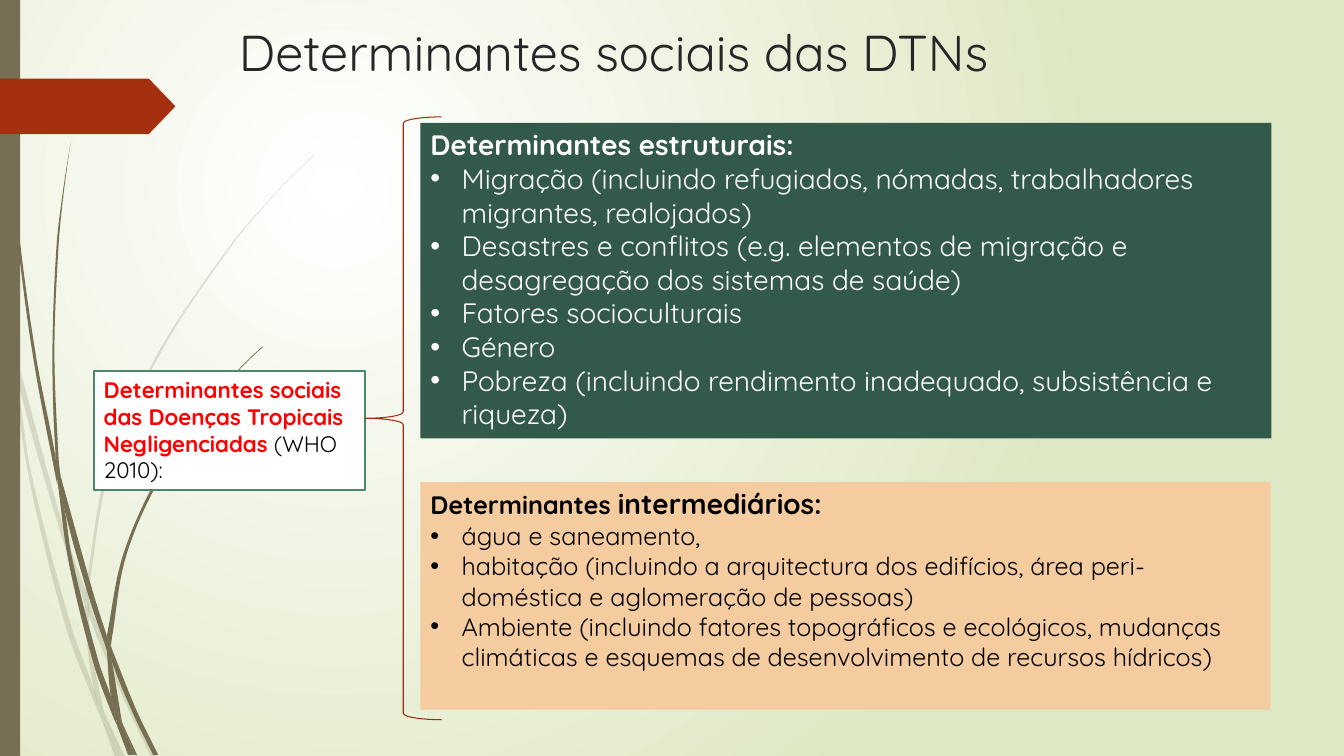
import math

from lxml import etree
from pptx import Presentation
from pptx import util as u
from pptx.dml.color import RGBColor
from pptx.enum import shapes, text
from pptx.oxml import ns

OLIVE = RGBColor(0x76, 0x6F, 0x54)
RUST = RGBColor(0xA5, 0x30, 0x10)
BRACE_RED = RGBColor(0x9E, 0x2E, 0x0F)
GREEN = RGBColor(0x32, 0x59, 0x49)
BORDER_GREEN = RGBColor(0x4B, 0x86, 0x6E)
PEACH = RGBColor(0xF5, 0xCB, 0xA0)
PALE_LIME = RGBColor(0xDF, 0xE8, 0xC4)
CHARCOAL = RGBColor(0x26, 0x26, 0x26)
RED = RGBColor(0xFF, 0, 0)
WHITE = RGBColor(0xFF, 0xFF, 0xFF)
BLACK = RGBColor(0, 0, 0)
FONT = "Quicksand"

PALE_WISPS = [
    ([(0, 2.82), (.09, 3.22), (.11, 3.5)], [(0, 2.99), (.1, 3.44), (.11, 3.5)]),
    ([(.14, 3.45), (.62, 5.2), (.85, 5.86)], [(.14, 3.45), (.17, 3.76), (.58, 5.22), (.84, 5.99)]),
    ([(.88, 5.96), (.92, 6.07), (1.27, 6.92), (1.55, 7.51)],
     [(.88, 5.96), (.88, 6.1), (1.23, 6.94), (1.5, 7.51)]),
    ([(1.05, 7.11), (1.24, 7.51)], [(1.05, 7.11), (1.19, 7.51)]),
    ([(.11, 3.5), (.17, 3.76), (.31, 4.69), (.7, 6.19), (.93, 6.83), (.99, 7.07), (1.01, 7.14)],
     [(.11, 3.5), (.28, 4.7), (.65, 6.21), (.92, 6.93), (1.01, 7.14)]),
    ([(.84, 5.99), (.87, 6.46), (.93, 6.83), (.96, 6.92), (1.05, 7.11)],
     [(.84, 5.99), (.88, 6.08), (.88, 6.1), (.91, 6.46), (1.03, 7.06), (1.05, 7.11)]),
    ([(3.12, 1.53), (2.89, 1.75), (2.68, 1.97), (2.28, 2.44), (1.58, 3.48), (1.07, 4.61),
      (.85, 5.84), (.85, 5.86), (.88, 5.96)],
     [(3.12, 1.54), (2.9, 1.75), (2.68, 1.98), (2.29, 2.45), (1.6, 3.49), (1.1, 4.62),
      (.88, 5.84), (.88, 5.96)]),
    ([(1.01, 7.14), (1.14, 7.51)], [(1.01, 7.14), (1.19, 7.51)]),
    ([(.85, 5.86), (.84, 5.99), (.88, 6.08)], [(.85, 5.86), (.88, 5.96), (.88, 6.1)]),
    ([(.93, 6.83), (.99, 7.07), (1.01, 7.14), (1.19, 7.51)],
     [(.93, 6.83), (.96, 6.92), (1.05, 7.11), (1.19, 7.51)]),
]
DARK_WISPS = [
    ([(.03, 0), (.04, .48), (.07, 1.1), (.17, 2.33), (.33, 3.55), (.56, 4.77), (.57, 4.81)],
     [(.04, 0), (.05, .48), (.08, 1.09), (.19, 2.32), (.36, 3.55), (.55, 4.53), (.57, 4.81)]),
    ([(.6, 4.72), (.64, 5.05), (.88, 5.92), (1.06, 6.45)], [(.6, 4.72), (.93, 5.9), (1.06, 6.31)]),
    ([(1.1, 6.41), (1.11, 6.56), (1.32, 7.08), (1.52, 7.49)],
     [(1.1, 6.41), (1.13, 6.49), (1.36, 7.06), (1.57, 7.49)]),
    ([(.57, 4.77), (.68, 5.57), (.93, 6.59), (1.11, 7.08), (1.17, 7.22)],
     [(.57, 4.77), (.64, 5.05), (.72, 5.56), (.98, 6.57), (1.1, 6.91), (1.16, 7.17), (1.17, 7.22)]),
    ([(.7, 1.41), (.62, 1.93), (.56, 2.45), (.52, 3.49), (.55, 4.49), (.6, 4.72)],
     [(.7, 1.41), (.63, 1.93), (.58, 2.45), (.54, 3.49), (.58, 4.53), (.6, 4.72)]),
    ([(1.22, 7.19), (1.33, 7.49)], [(1.22, 7.19), (1.36, 7.49)]),
    ([(.55, 4.49), (.55, 4.53), (.57, 4.77), (.64, 5.05)], [(.55, 4.49), (.6, 4.72), (.64, 5.05)]),
    ([(2.6, 3.44), (2.45, 3.58), (2.31, 3.73), (2.04, 4.05), (1.56, 4.74), (1.22, 5.51), (1.06, 6.31)],
     [(2.61, 3.44), (2.45, 3.59), (2.31, 3.74), (2.05, 4.06), (1.58, 4.76), (1.25, 5.52),
      (1.11, 6.33), (1.1, 6.41)]),
    ([(1.17, 7.22), (1.27, 7.49)], [(1.17, 7.22), (1.31, 7.49)]),
    ([(1.06, 6.45), (1.1, 6.91), (1.16, 7.06), (1.22, 7.19)],
     [(1.06, 6.45), (1.09, 6.51), (1.11, 6.56), (1.21, 7.16), (1.22, 7.19)]),
    ([(1.06, 6.31), (1.06, 6.45), (1.11, 6.56)], [(1.06, 6.31), (1.1, 6.41), (1.11, 6.56)]),
    ([(1.1, 6.91), (1.16, 7.17), (1.17, 7.22), (1.3, 7.49)],
     [(1.1, 6.91), (1.16, 7.06), (1.22, 7.19), (1.33, 7.49)]),
]
STRUCTURAL = [
    "Migração (incluindo refugiados, nómadas, trabalhadores migrantes, realojados)",
    "Desastres e conflitos (e.g. elementos de migração e desagregação dos sistemas de saúde)",
    "Fatores socioculturais", "Género",
    "Pobreza (incluindo rendimento inadequado, subsistência e riqueza)",
]
INTERMEDIATE = [
    "água e saneamento,",
    "habitação (incluindo a arquitectura dos edifícios, área peri-doméstica e aglomeração de pessoas)",
    "Ambiente (incluindo fatores topográficos e ecológicos, mudanças climáticas e esquemas de "
    "desenvolvimento de recursos hídricos)",
]


def paint_background(slide):
    """Fill the slide with a round glow of white turning to lime."""
    fill = slide.background.fill
    fill.gradient()
    for stop, color in zip(fill.gradient_stops, (WHITE, PALE_LIME)):
        stop.color.rgb = color
    gradient = slide.background._cSld.find(".//" + ns.qn("a:gradFill"))
    gradient.remove(gradient.find(ns.qn("a:lin")))
    glow = etree.SubElement(gradient, ns.qn("a:path"), path="circle")
    etree.SubElement(glow, ns.qn("a:fillToRect"), l="50000", t="50000", r="100000", b="100000")


def paint(shape, fill=None, line=None, width=1):
    """Give a shape its fill and outline and take away its shadow."""
    shape.shadow.inherit = False
    for part, color in ((shape.fill, fill), (shape.line.fill, line)):
        if color is None:
            part.background()
        else:
            part.solid()
            part.fore_color.rgb = color
    if line is not None:
        shape.line.width = u.Pt(width)
    return shape


def add_preset(slide, kind, box, **style):
    """Add a painted preset shape at a box given in inches."""
    return paint(slide.shapes.add_shape(kind, *map(u.Inches, box)), **style)


def curve_handles(knots):
    """Return the two Bezier handles of each segment of a smooth curve."""
    padded = [knots[0], *knots, knots[-1]]
    handles = []
    for a, b, c, d in zip(padded, padded[1:], padded[2:], padded[3:]):
        reach = math.dist(b, c) / 3
        before, after = reach / math.dist(a, c), reach / math.dist(b, d)
        handles.append([[q + (r - p) * before for p, q, r in zip(a, b, c)],
                        [r - (s - q) * after for q, r, s in zip(b, c, d)]])
    return handles


def add_wisp(slide, edges, opacity):
    """Add a blade of grass between two curved edges."""
    near, far = edges[0], edges[1][::-1]
    knots = near + far
    builder = slide.shapes.build_freeform(*(1000 * v for v in knots[0]), scale=u.Inches(1) / 1000)
    builder.add_line_segments([(1000 * x, 1000 * y) for x, y in knots[1:]], close=True)
    wisp = paint(builder.convert_to_shape(), fill=OLIVE)
    corner = [min(axis) for axis in zip(*knots)]
    segments = list(wisp._element.spPr.iter(ns.qn("a:lnTo")))
    for segment, handles in zip(segments, curve_handles(near) + [None] + curve_handles(far)):
        if handles:
            curve = etree.Element(ns.qn("a:cubicBezTo"))
            for handle in handles:
                x, y = (str(round(1000 * (v - low))) for v, low in zip(handle, corner))
                etree.SubElement(curve, ns.qn("a:pt"), x=x, y=y)
            segment.getparent().replace(segment, curve)
            curve.append(segment[0])
    if opacity < 100:
        color = wisp._element.spPr.find(".//" + ns.qn("a:srgbClr"))
        etree.SubElement(color, ns.qn("a:alpha"), val=str(opacity * 1000))


def write_runs(paragraph, *runs):
    """Write (words, size, color, bold) runs into a left-aligned paragraph."""
    paragraph.alignment = text.PP_ALIGN.LEFT
    for words, size, color, bold in runs:
        run = paragraph.add_run()
        run.text = words
        run.font.color.rgb = color
        for name, value in {"name": FONT, "size": u.Pt(size), "bold": bold}.items():
            setattr(run.font, name, value)


def prepare_frame(shape):
    """Wrap the text of a shape from its top and return its first paragraph."""
    settings = {"word_wrap": True, "vertical_anchor": text.MSO_ANCHOR.TOP,
                "auto_size": text.MSO_AUTO_SIZE.NONE}
    for name, value in settings.items():
        setattr(shape.text_frame, name, value)
    return shape.text_frame.paragraphs[0]


def add_determinants(slide, box, fill, color, heading, items, size):
    """Add a panel with a bold heading and a bulleted list."""
    panel = add_preset(slide, shapes.MSO_SHAPE.RECTANGLE, box, fill=fill)
    write_runs(prepare_frame(panel), *((words, pt, color, True) for words, pt in heading))
    for item in items:
        paragraph = panel.text_frame.add_paragraph()
        write_runs(paragraph, (item, size, color, False))
        properties = paragraph._p.get_or_add_pPr()
        indent = u.Inches(0.31)
        for name, value in {"marL": indent, "indent": -indent}.items():
            properties.set(name, str(value))
        etree.SubElement(properties, ns.qn("a:buFont"), typeface="Arial")
        etree.SubElement(properties, ns.qn("a:buChar"), char="•")


def main():
    """Build the slide and save it."""
    deck = Presentation()
    deck.slide_width, deck.slide_height = u.Inches(13.33), u.Inches(7.5)
    slide = deck.slides.add_slide(deck.slide_layouts[6])
    preset = shapes.MSO_SHAPE
    paint_background(slide)
    for wisps, opacity in ((PALE_WISPS, 20), (DARK_WISPS, 100)):
        for edges in wisps:
            add_wisp(slide, edges, opacity)
    add_preset(slide, preset.RECTANGLE, (0, 0, 0.2, 7.5), fill=OLIVE)
    marker = add_preset(slide, preset.PENTAGON, (0, 0.78, 1.74, 0.55), fill=RUST)
    marker.adjustments[0] = 0.48
    title = slide.shapes.add_textbox(*map(u.Inches, (2.27, 0.16, 11, 0.85)))
    write_runs(prepare_frame(title), ("Determinantes sociais das DTNs", 36, CHARCOAL, False))
    topic = add_preset(slide, preset.RECTANGLE, (0.93, 3.68, 2.69, 1.18),
                       fill=WHITE, line=BORDER_GREEN, width=1.25)
    write_runs(prepare_frame(topic),
               ("Determinantes sociais das Doenças Tropicais Negligenciadas ", 16, RED, True),
               ("(WHO 2010):", 16, BLACK, False))
    add_determinants(slide, (4.17, 1.22, 8.44, 3.13), GREEN, WHITE,
                     [("Determinantes estruturais:", 20)], STRUCTURAL, 20)
    add_determinants(slide, (4.17, 4.78, 8.43, 2.26), PEACH, BLACK,
                     [("Determinantes ", 18), ("intermediários:", 20)], INTERMEDIATE, 18)
    add_preset(slide, preset.LEFT_BRACE, (3.62, 1.16, 0.76, 5.98), line=BRACE_RED, width=0.75)
    deck.save("out.pptx")


if __name__ == "__main__":
    main()
